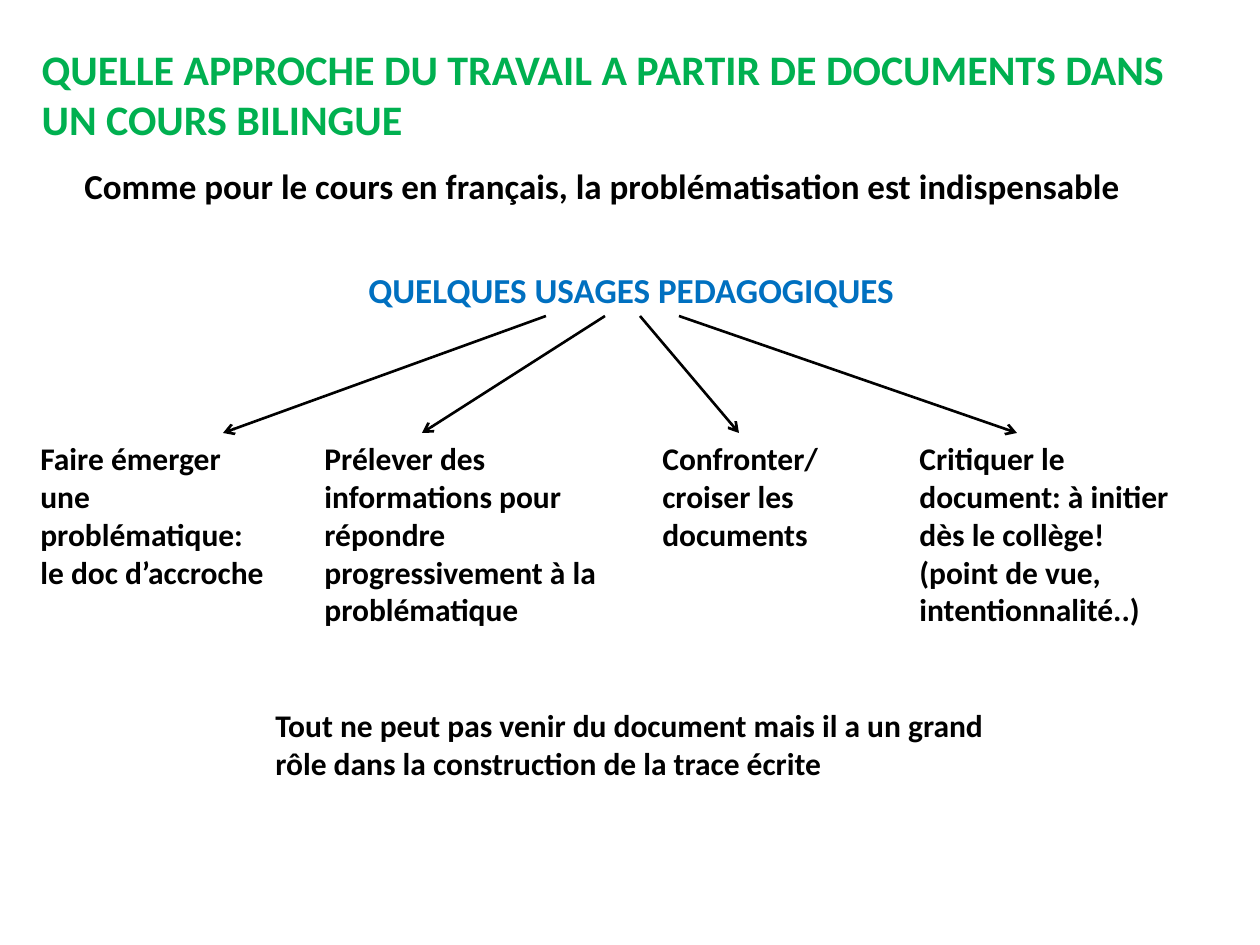
from lxml.etree import SubElement
from pptx import Presentation
from pptx.dml.color import RGBColor
from pptx.enum.shapes import MSO_CONNECTOR
from pptx.enum.text import MSO_ANCHOR, MSO_AUTO_SIZE, PP_ALIGN
from pptx.oxml.ns import qn
from pptx.util import Inches, Pt

PX_PER_INCH = 126
FONT = "Calibri"
COLORS = {"title": "00B050", "heading": "0070C0", "ink": "000000"}

# Left, width, height of the text, horizontal start and end of its arrow, paragraphs
USAGES = [
    (28, 256, 165, 546, 223, ["Faire émerger une problématique: le doc d’accroche"]),
    (312, 297, 204, 605, 422,
     ["Prélever des informations pour répondre progressivement à la problématique"]),
    (650, 228, 127, 640, 739, ["Confronter/", "croiser les documents"]),
    (907, 297, 204, 679, 1017,
     ["Critiquer le document: à initier dès le collège!",
      "(point de vue, intentionnalité..)"]),
]


def px(length):
    return round(Inches(length) / PX_PER_INCH)


def place(shape, box):
    shape.left, shape.top, shape.width, shape.height = map(px, box)


def write(shape, paragraphs, size, color):
    frame = shape.text_frame
    frame.text = "\n".join(paragraphs)
    frame.word_wrap = True
    frame.auto_size = MSO_AUTO_SIZE.NONE
    frame.vertical_anchor = MSO_ANCHOR.TOP
    for para in frame.paragraphs:
        para.alignment = PP_ALIGN.LEFT
        for span in para.runs:
            span.font.name = FONT
            span.font.size = Pt(size)
            span.font.bold = True
            span.font.color.rgb = RGBColor.from_string(COLORS[color])


def add_text(page, box, paragraphs, size, color="ink"):
    shape = page.shapes.add_textbox(*map(px, box))
    write(shape, paragraphs, size, color)


def add_title(page, box):
    title = page.shapes.title
    place(title, box)
    write(title, ["QUELLE APPROCHE DU TRAVAIL A PARTIR DE DOCUMENTS DANS UN COURS BILINGUE"],
          24, "title")


def add_arrow(page, start, end):
    arrow = page.shapes.add_connector(MSO_CONNECTOR.STRAIGHT, *map(px, start + end))
    arrow.line.color.rgb = RGBColor.from_string(COLORS["ink"])
    arrow.line.width = Pt(1.5)
    SubElement(arrow.line._get_or_add_ln(), qn("a:tailEnd"), type="arrow")
    SubElement(arrow._element.spPr, qn("a:effectLst"))


def add_usages(page, box):
    """Heading at the top of the box, with arrows down to one text per usage."""
    left, top, width, height = box
    add_text(page, (left + 356, top, 630, 55), ["QUELQUES USAGES PEDAGOGIQUES"], 20, "heading")
    arrow_top, text_top = top + 54, top + 171
    for text_left, text_width, text_height, start, end, paragraphs in USAGES:
        add_text(page, (left + text_left, text_top, text_width, text_height), paragraphs, 18)
        add_arrow(page, (left + start, arrow_top), (left + end, text_top))


def main():
    deck = Presentation()
    deck.slide_width, deck.slide_height = Inches(10), Inches(7.5)
    page = deck.slides.add_slide(deck.slide_layouts.get_by_name("Title Only"))
    add_title(page, (29, 37, 1201, 115))
    add_text(page, (72, 158, 1151, 93),
             ["Comme pour le cours en français, la problématisation est indispensable"], 20)
    add_usages(page, (0, 262, 1260, 376))
    add_text(page, (263, 700, 784, 89),
             ["Tout ne peut pas venir du document mais il a un grand rôle dans la "
              "construction de la trace écrite"], 18)
    deck.save("out.pptx")


if __name__ == "__main__":
    main()
